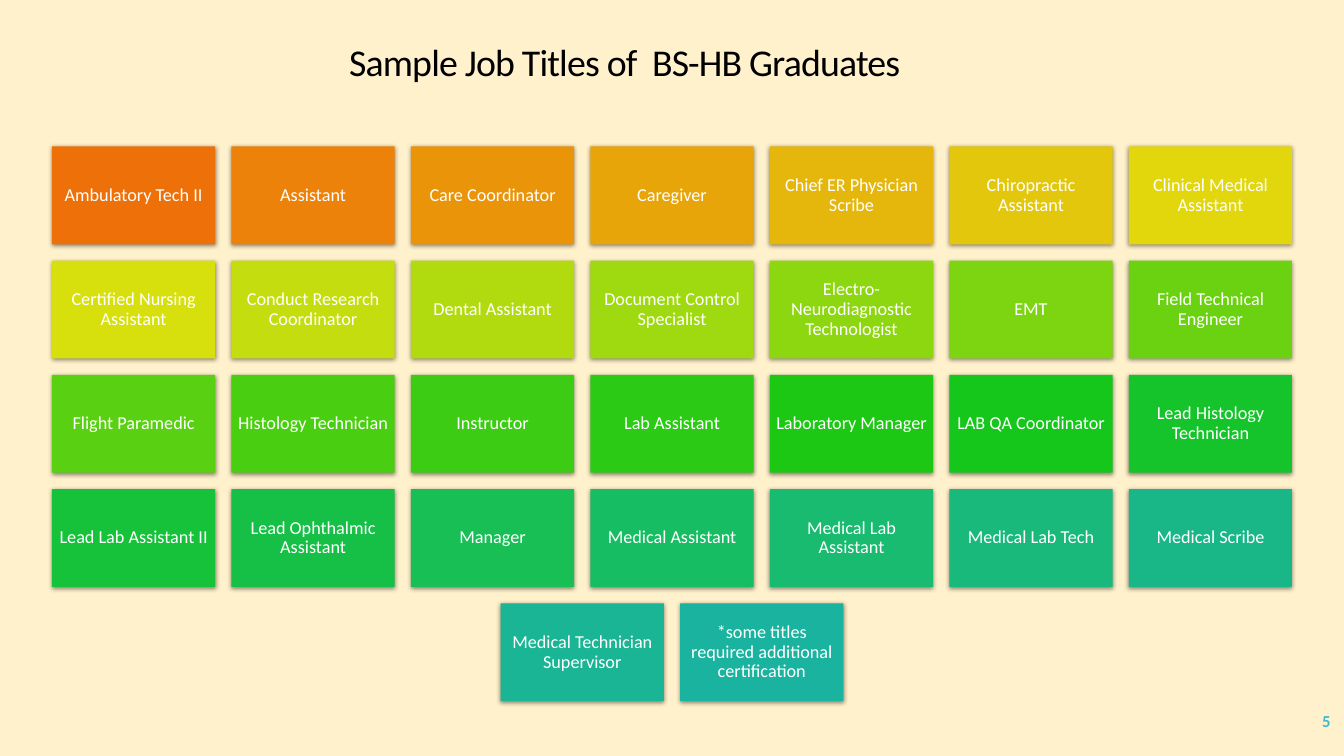
"""Build a slide showing sample job titles as a grid of coloured tiles."""
from colorsys import hls_to_rgb

from lxml import etree
from pptx import Presentation
from pptx.dml.color import RGBColor
from pptx.enum.shapes import MSO_SHAPE
from pptx.enum.text import MSO_ANCHOR, MSO_AUTO_SIZE, PP_ALIGN
from pptx.oxml import parse_xml
from pptx.oxml.ns import nsdecls
from pptx.util import Pt

RECTANGLE = MSO_SHAPE.RECTANGLE
MIDDLE = MSO_ANCHOR.MIDDLE
NO_AUTOFIT = MSO_AUTO_SIZE.NONE
CENTER, RIGHT = PP_ALIGN.CENTER, PP_ALIGN.RIGHT

TITLE_ONLY = 5
FONT = "Calibri"
COLORS = {
    "background": "FFF1CB",
    "title": "000000",
    "label": "FFFFFF",
    "number": "40BAD2",
    "shadow": "000000",
}
SLIDE_WIDTH, SLIDE_HEIGHT = 960, 540
COLUMNS = 7
TILE_WIDTH, TILE_HEIGHT = 116.6, 70
COLUMN_STEP, ROW_STEP = 128.2, 81.6
GRID_TOP = 104.5
FIRST_HLS = (27.1 / 360, 0.482, 0.935)
LAST_HLS = (172.2 / 360, 0.402, 0.746)

JOB_TITLES = [
    "Ambulatory Tech II", "Assistant", "Care Coordinator", "Caregiver",
    "Chief ER Physician Scribe", "Chiropractic Assistant",
    "Clinical Medical Assistant",
    "Certified Nursing Assistant", "Conduct Research Coordinator",
    "Dental Assistant", "Document Control Specialist",
    "Electro-Neurodiagnostic Technologist", "EMT",
    "Field Technical Engineer",
    "Flight Paramedic", "Histology Technician", "Instructor",
    "Lab Assistant", "Laboratory Manager", "LAB QA Coordinator",
    "Lead Histology Technician",
    "Lead Lab Assistant II", "Lead Ophthalmic Assistant", "Manager",
    "Medical Assistant", "Medical Lab Assistant", "Medical Lab Tech",
    "Medical Scribe",
    "Medical Technician Supervisor",
    "*some titles required additional certification",
]


def write_text(shape, text, size, color, align=CENTER, bold=False):
    """Put one formatted paragraph in a shape and return the paragraph."""
    frame = shape.text_frame
    frame.word_wrap = True
    frame.auto_size = NO_AUTOFIT
    frame.vertical_anchor = MIDDLE
    frame.text = text
    paragraph = frame.paragraphs[0]
    paragraph.alignment = align
    font = paragraph.font
    font.name, font.size, font.bold = FONT, Pt(size), bold
    font.color.rgb = RGBColor.from_string(COLORS[color])
    return paragraph


def add_shadow(shape):
    """Give a shape a soft shadow that falls straight down."""
    properties = shape.fill._xPr
    for effects in properties.findall("{*}effectLst"):
        properties.remove(effects)
    effects = parse_xml(f"<a:effectLst {nsdecls('a')}/>")
    namespace = etree.QName(effects).namespace
    shadow = etree.SubElement(
        effects, f"{{{namespace}}}outerShdw", blurRad=str(Pt(3.5)),
        dist=str(Pt(1.1)), dir="5400000", algn="ctr", rotWithShape="0")
    color = etree.SubElement(
        shadow, f"{{{namespace}}}srgbClr", val=COLORS["shadow"])
    etree.SubElement(color, f"{{{namespace}}}alpha", val="45000")
    properties.append(effects)


def tile_color(index):
    """Return the tile's colour on the even hue sweep from first to last."""
    share = index / (len(JOB_TITLES) - 1)
    hls = [a + (b - a) * share for a, b in zip(FIRST_HLS, LAST_HLS)]
    return RGBColor(*(round(255 * channel) for channel in hls_to_rgb(*hls)))


def add_title(page, text):
    """Place and format the slide title."""
    title = page.shapes.title
    title.left, title.top = Pt(0), Pt(28.8)
    title.width, title.height = Pt(892), Pt(33.8)
    paragraph = write_text(title, text, 27, "title")
    paragraph.line_spacing = 0.9
    paragraph.runs[0].font._element.set("spc", "-60")


def add_tile(page, left, top, text, color):
    """Add one shadowed tile with its job title."""
    tile = page.shapes.add_shape(
        RECTANGLE, Pt(left), Pt(top), Pt(TILE_WIDTH), Pt(TILE_HEIGHT))
    tile.fill.solid()
    tile.fill.fore_color.rgb = color
    tile.line.fill.background()
    tile.shadow.inherit = False
    add_shadow(tile)
    frame = tile.text_frame
    frame.margin_left = frame.margin_right = Pt(3.6)
    frame.margin_top = frame.margin_bottom = Pt(3.6)
    write_text(tile, text, 13, "label").line_spacing = 0.9


def add_tile_grid(page):
    """Lay the job titles out in rows, each centred on the slide."""
    for start in range(0, len(JOB_TITLES), COLUMNS):
        row = JOB_TITLES[start:start + COLUMNS]
        row_width = (len(row) - 1) * COLUMN_STEP + TILE_WIDTH
        left = (SLIDE_WIDTH - row_width) / 2
        top = GRID_TOP + start // COLUMNS * ROW_STEP
        for column, text in enumerate(row):
            add_tile(page, left + column * COLUMN_STEP, top, text,
                     tile_color(start + column))


def add_page_number(page, number):
    """Add the page number in the lower right corner."""
    box = page.shapes.add_textbox(Pt(837.4), Pt(500.4), Pt(120.2), Pt(28.8))
    paragraph = write_text(box, number, 12, "number", RIGHT, bold=True)
    paragraph.space_after = Pt(6)


def main():
    """Build and save the deck."""
    deck = Presentation()
    deck.slide_width, deck.slide_height = Pt(SLIDE_WIDTH), Pt(SLIDE_HEIGHT)
    page = deck.slides.add_slide(deck.slide_layouts[TITLE_ONLY])
    background = page.background.fill
    background.solid()
    background.fore_color.rgb = RGBColor.from_string(COLORS["background"])
    add_title(page, "Sample Job Titles of  BS-HB Graduates")
    add_tile_grid(page)
    add_page_number(page, "5")
    deck.save("out.pptx")


if __name__ == "__main__":
    main()
